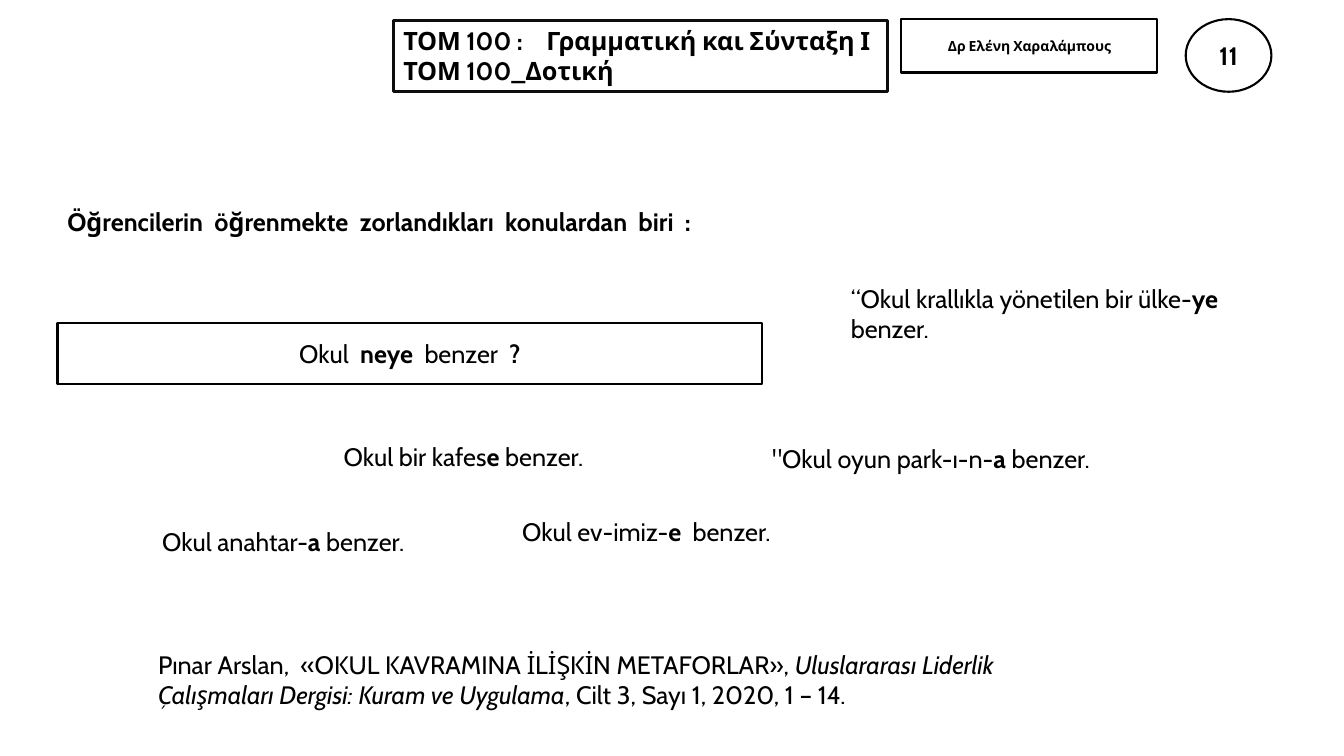
"""Build a Turkish grammar slide on the dative case with school metaphors."""
import pptx
import pptx.dml.color
import pptx.enum.shapes
import pptx.enum.text
import pptx.oxml
import pptx.util
from lxml import etree
from pptx.util import Inches

COLORS = {"ink": "000000", "header_line": "0D0D0D", "paper": "FFFFFF"}
FONT = "Cabin"
ALIGN = pptx.enum.text.PP_ALIGN
ANCHOR = pptx.enum.text.MSO_ANCHOR
SHAPE = pptx.enum.shapes.MSO_SHAPE

SENTENCES = [
    (1.51, 5.17, 6.67, 0.4, [("Okul anahtar-", ""), ("a ", "b"), ("benzer.", "")]),
    (3.31, 4.33, 6.67, 0.4, [("Okul bir kafes", ""), ("e ", "b"), ("benzer.", "")]),
    (8.34, 2.76, 4.6, 0.71,
     [("“Okul krallıkla yönetilen bir ülke-", ""), ("ye ", "b"), ("benzer.", "")]),
    (7.56, 4.35, 5.6, 0.4,
     [("\"Okul oyun park-ı-n-", ""), ("a ", "b"), ("benzer.", "")]),
    (5.08, 5.07, 7.95, 0.4, [("Okul ev-imiz-", ""), ("e ", "b"), (" benzer.", "")]),
]
HEADING = [("Öğrencilerin  öğrenmekte  zorlandıkları  konulardan  biri  :", "b")]
QUESTION = [("Okul  ", ""), ("neye  ", "b"), ("benzer  ", ""), ("?", "b")]
REFERENCE = [
    ("Pınar Arslan,  «OKUL KAVRAMINA İLİŞKİN METAFORLAR», ", ""),
    ("Uluslararası Liderlik Çalışmaları Dergisi: Kuram ve Uygulama", "i"),
    (", Cilt 3, Sayı 1, 2020, 1 – 14.", ""),
]


def rgb(name):
    """Return the named colour."""
    return pptx.dml.color.RGBColor.from_string(COLORS[name])


def style_run(run, style, size):
    """Give a run its font, with b for bold and i for italic."""
    run.font.name = FONT
    run.font.size = pptx.util.Pt(size)
    run.font.bold = style == "b"
    run.font.italic = style == "i"
    run.font.color.rgb = rgb("ink")


def write_parts(paragraph, parts, size=18):
    """Fill a paragraph with styled pieces of text."""
    for words, style in parts:
        run = paragraph.add_run()
        run.text = words
        style_run(run, style, size)


def outline(shape, color, width):
    """Draw a solid border around a shape."""
    shape.line.color.rgb = rgb(color)
    shape.line.width = pptx.util.Pt(width)


def add_sentence(slide, left, top, width, height, parts):
    """Add a wrapped, left-aligned text box."""
    sentence = slide.shapes.add_textbox(*map(Inches, (left, top, width, height)))
    sentence.text_frame.word_wrap = True
    write_parts(sentence.text_frame.paragraphs[0], parts)


def add_frame(slide, kind, box, parts, size=18):
    """Add an outlined shape with centred text."""
    frame = slide.shapes.add_shape(kind, *map(Inches, box))
    frame.shadow.inherit = False
    frame.fill.solid()
    frame.fill.fore_color.rgb = rgb("paper")
    outline(frame, "ink", 1.5)
    frame.text_frame.word_wrap = True
    frame.text_frame.vertical_anchor = ANCHOR.MIDDLE
    paragraph = frame.text_frame.paragraphs[0]
    paragraph.alignment = ALIGN.CENTER
    write_parts(paragraph, parts, size)


def set_tab_stop(paragraph, position):
    """Place a left tab stop in a paragraph."""
    properties = paragraph._p.get_or_add_pPr()
    stops = etree.SubElement(properties, pptx.oxml.ns.qn("a:tabLst"))
    etree.SubElement(stops, pptx.oxml.ns.qn("a:tab"),
                     pos=str(Inches(position)), algn="l")


def format_title(slide):
    """Fill, place and outline the course title."""
    title = slide.shapes.title
    title.left, title.top, title.width, title.height = map(
        Inches, (3.9, 0.2, 4.9, 0.71))
    outline(title, "header_line", 2.25)
    course = title.text_frame
    course.text = "ΤΟΜ 100 :\tΓραμματική και Σύνταξη Ι\nΤΟΜ 100_Δοτική"
    course.auto_size = pptx.enum.text.MSO_AUTO_SIZE.NONE
    course.word_wrap = True
    course.vertical_anchor = ANCHOR.TOP
    for paragraph in course.paragraphs:
        paragraph.alignment = ALIGN.LEFT
        for run in paragraph.runs:
            style_run(run, "b", 18)
    set_tab_stop(course.paragraphs[0], 1.42)


def main():
    """Build and save the slide."""
    deck = pptx.Presentation()
    deck.slide_width, deck.slide_height = Inches(13.33), Inches(7.5)
    slide = deck.slides.add_slide(deck.slide_layouts.get_by_name("Title Only"))
    format_title(slide)
    add_sentence(slide, 0.57, 2, 12.46, 0.4, HEADING)
    add_frame(slide, SHAPE.RECTANGLE, (0.57, 3.2, 6.99, 0.61), QUESTION)
    for sentence in SENTENCES:
        add_sentence(slide, *sentence)
    add_sentence(slide, 1.47, 6.39, 8.93, 0.71, REFERENCE)
    add_frame(slide, SHAPE.RECTANGLE, (8.94, 0.19, 2.54, 0.53),
              [("Δρ Ελένη Χαραλάμπους", "b")], 10)
    add_frame(slide, SHAPE.OVAL, (11.76, 0.19, 0.85, 0.72), [("11", "b")])
    deck.save("out.pptx")


if __name__ == "__main__":
    main()
